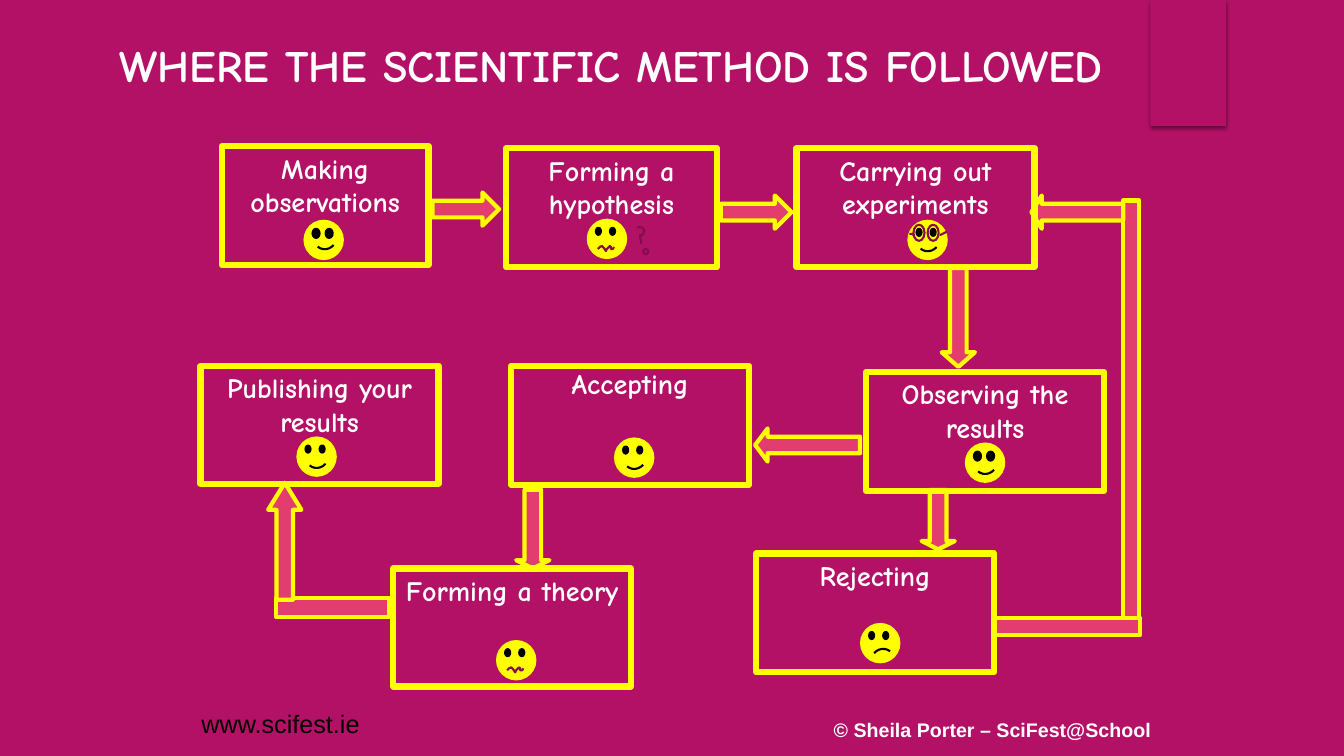
from dataclasses import dataclass

from lxml import etree
from pptx import Presentation
from pptx.dml.color import RGBColor
from pptx.enum.shapes import MSO_SHAPE
from pptx.enum.text import MSO_ANCHOR, MSO_AUTO_SIZE, PP_ALIGN
from pptx.oxml.ns import qn
from pptx.util import Emu, Pt

RECTANGLE, ELLIPSE, ARC = MSO_SHAPE.RECTANGLE, MSO_SHAPE.OVAL, MSO_SHAPE.ARC
LEFT, RIGHT = MSO_SHAPE.LEFT_ARROW, MSO_SHAPE.RIGHT_ARROW
UP, DOWN = MSO_SHAPE.UP_ARROW, MSO_SHAPE.DOWN_ARROW
CENTER, ALIGN_LEFT = PP_ALIGN.CENTER, PP_ALIGN.LEFT
TOP, NO_AUTOFIT = MSO_ANCHOR.TOP, MSO_AUTO_SIZE.NONE

COLUMNS, ROWS = 1333, 750
CELL = 9144


@dataclass(frozen=True)
class Theme:
    background: str = "B31166"
    outline: str = "FFFF00"
    arrow: str = "E33D6F"
    sketch: str = "840D4B"
    light: str = "FFFFFF"
    dark: str = "000000"
    hand_font: str = "Comic Neue"
    plain_font: str = "Arial"
    title_size: int = 32
    step_size: int = 20
    site_size: int = 18
    credit_size: int = 14
    box_line: float = 4.5
    arrow_line: float = 3
    face_line: float = 1.5


THEME = Theme()


@dataclass(frozen=True)
class Area:
    column: float
    row: float
    columns: float
    rows: float


@dataclass(frozen=True)
class Face:
    column: float
    row: float
    mouth: str = "smile"
    wide_eyes: bool = False
    mouth_shift: tuple = (0, 0)


@dataclass(frozen=True)
class Step:
    label: str
    area: Area
    face: Face
    inset_top: int = 5


@dataclass(frozen=True)
class Flow:
    kind: int
    area: Area
    head: float = 0.5


STEPS = (
    Step("Making observations", Area(220, 145, 205, 118),
         Face(302, 219, wide_eyes=True, mouth_shift=(1, -2))),
    Step("Accepting", Area(507, 363, 236, 118), Face(610, 435), 1),
    Step("Rejecting", Area(750, 549, 236, 118), Face(854, 619, "frown")),
    Step("Forming a hypothesis", Area(502, 147, 209, 118), Face(583, 218, "wavy")),
    Step("Publishing your results", Area(199, 363, 236, 117), Face(295, 434)),
    Step("Carrying out experiments", Area(790, 147, 236, 118), Face(901, 219)),
    Step("Observing the results", Area(859, 369, 236, 118),
         Face(958, 440, wide_eyes=True)),
    Step("Forming a theory", Area(390, 564, 236, 117), Face(493, 636, "wavy")),
)
FLOWS = (
    Flow(LEFT, Area(749, 425, 104, 33), 0.375),
    Flow(DOWN, Area(914, 486, 33, 59), 0.25),
    Flow(RECTANGLE, Area(986, 613, 145, 17)),
    Flow(RECTANGLE, Area(1114, 199, 16, 414)),
    Flow(LEFT, Area(1023, 194, 91, 33), 0.312),
    Flow(RIGHT, Area(429, 191, 66, 33)),
    Flow(RECTANGLE, Area(274, 593, 112, 19)),
    Flow(UP, Area(266, 479, 33, 116), 0.812),
    Flow(RIGHT, Area(715, 194, 70, 33)),
    Flow(DOWN, Area(934, 266, 33, 98), 0.438),
    Flow(DOWN, Area(512, 486, 33, 78), 0.25),
)
WAVY_MOUTH = ((10, 29), (12, 27), (14, 26), (16, 28), (18, 31), (19, 29),
              (20, 28), (22, 26), (23, 27), (23, 29), (25, 29), (26, 27))
QUESTION_HOOK = ((632, 226), (635, 225), (637, 226), (639, 228), (638, 232),
                 (636, 234), (635, 233), (635, 237), (636, 239), (636, 242))
GLASSES_ARMS = (((932, 233), (933, 233), (935, 232), (937, 231), (939, 230)),
                ((906, 233), (904, 232.5), (902, 232)))


def cells(count: float) -> Emu:
    return Emu(round(count * CELL))


def bounds(area: Area) -> tuple:
    return tuple(map(cells, (area.column, area.row, area.columns, area.rows)))


def paint(shape, fill: str | None, line: str | None, width: float = 0):
    shape.shadow.inherit = False
    if fill:
        shape.fill.solid()
        shape.fill.fore_color.rgb = RGBColor.from_string(fill)
    else:
        shape.fill.background()
    if line:
        shape.line.color.rgb = RGBColor.from_string(line)
        shape.line.width = Pt(width)
    else:
        shape.line.fill.background()
    return shape


def draw(slide, kind: int, area: Area, fill: str | None, line: str | None,
         width: float = THEME.face_line):
    return paint(slide.shapes.add_shape(kind, *bounds(area)), fill, line, width)


def sketch(slide, points: tuple, column: float = 0, row: float = 0) -> None:
    placed = [(column + x, row + y) for x, y in points]
    builder = slide.shapes.build_freeform(*placed[0], scale=CELL)
    builder.add_line_segments(placed[1:], close=False)
    paint(builder.convert_to_shape(), None, THEME.sketch, THEME.face_line)


def write(shape, text: str, size: int, font: str, color: str, bold: bool = True,
          align: int = ALIGN_LEFT, inset_top: int = 5) -> None:
    frame = shape.text_frame
    frame.word_wrap = True
    frame.auto_size = NO_AUTOFIT
    frame.vertical_anchor = TOP
    frame.margin_top = cells(inset_top)
    paragraph = frame.paragraphs[0]
    paragraph.text = text
    paragraph.alignment = align
    paragraph.font.size = Pt(size)
    paragraph.font.name = font
    paragraph.font.bold = bold
    paragraph.font.color.rgb = RGBColor.from_string(color)


def draw_face(slide, face: Face) -> None:
    x, y = face.column, face.row
    draw(slide, ELLIPSE, Area(x, y, 38, 38), THEME.outline, THEME.outline)
    eye_width, eye_height, right_eye = (7, 9, 21) if face.wide_eyes else (5, 7, 22)
    for offset in (8, right_eye):
        draw(slide, ELLIPSE, Area(x + offset, y + 8, eye_width, eye_height),
             THEME.dark, THEME.dark)
    if face.mouth == "wavy":
        sketch(slide, WAVY_MOUTH, x, y)
        return
    dx, dy, turn = (8, 8, 130.5) if face.mouth == "smile" else (10, 25, 309.7)
    shift_x, shift_y = face.mouth_shift
    mouth = draw(slide, ARC, Area(x + dx + shift_x, y + dy + shift_y, 23, 22),
                 None, THEME.dark)
    mouth.rotation = turn


def draw_step(slide, step: Step) -> None:
    box = draw(slide, RECTANGLE, step.area, None, THEME.outline, THEME.box_line)
    write(box, step.label, THEME.step_size, THEME.hand_font, THEME.light,
          align=CENTER, inset_top=step.inset_top)
    draw_face(slide, step.face)


def draw_flow(slide, flow: Flow) -> None:
    arrow = draw(slide, flow.kind, flow.area, THEME.arrow, THEME.outline,
                 THEME.arrow_line)
    if flow.kind != RECTANGLE:
        arrow.adjustments[0] = 0.5
        arrow.adjustments[1] = flow.head


def draw_tab(slide) -> None:
    tab = draw(slide, RECTANGLE, Area(1141, 0, 75, 125), THEME.background, None)
    effects = tab._element.spPr.find(qn("a:effectLst"))
    shadow = etree.SubElement(effects, qn("a:outerShdw"), blurRad=str(Pt(3)),
                              dist=str(Pt(2)), dir="5400000", rotWithShape="0")
    color = etree.SubElement(shadow, qn("a:srgbClr"), val=THEME.dark)
    etree.SubElement(color, qn("a:alpha"), val="45000")


def main() -> None:
    deck = Presentation()
    deck.slide_width, deck.slide_height = cells(COLUMNS), cells(ROWS)
    slide = deck.slides.add_slide(deck.slide_layouts[5])
    slide.background.fill.solid()
    slide.background.fill.fore_color.rgb = RGBColor.from_string(THEME.background)

    draw_tab(slide)
    title = slide.shapes.title
    title.left, title.top, title.width, title.height = bounds(Area(109, 32, 1224, 64))
    write(title, "WHERE THE SCIENTIFIC METHOD IS FOLLOWED", THEME.title_size,
          THEME.hand_font, THEME.light)
    for flow in FLOWS:
        draw_flow(slide, flow)
    for step in STEPS:
        draw_step(slide, step)

    sketch(slide, QUESTION_HOOK)
    draw(slide, ELLIPSE, Area(638, 247, 5, 5), THEME.background, THEME.sketch)
    for lens_column in (906, 920):
        draw(slide, ELLIPSE, Area(lens_column, 223, 11, 16), None, THEME.sketch)
    for arm in GLASSES_ARMS:
        sketch(slide, arm)

    credit = slide.shapes.add_textbox(*bounds(Area(817, 707, 339, 34)))
    write(credit, "© Sheila Porter – SciFest@School", THEME.credit_size,
          THEME.plain_font, THEME.light)
    site = slide.shapes.add_textbox(*bounds(Area(190, 698, 186, 40)))
    write(site, "www.scifest.ie", THEME.site_size, THEME.plain_font, THEME.dark,
          bold=False)
    deck.save("out.pptx")


if __name__ == "__main__":
    main()
